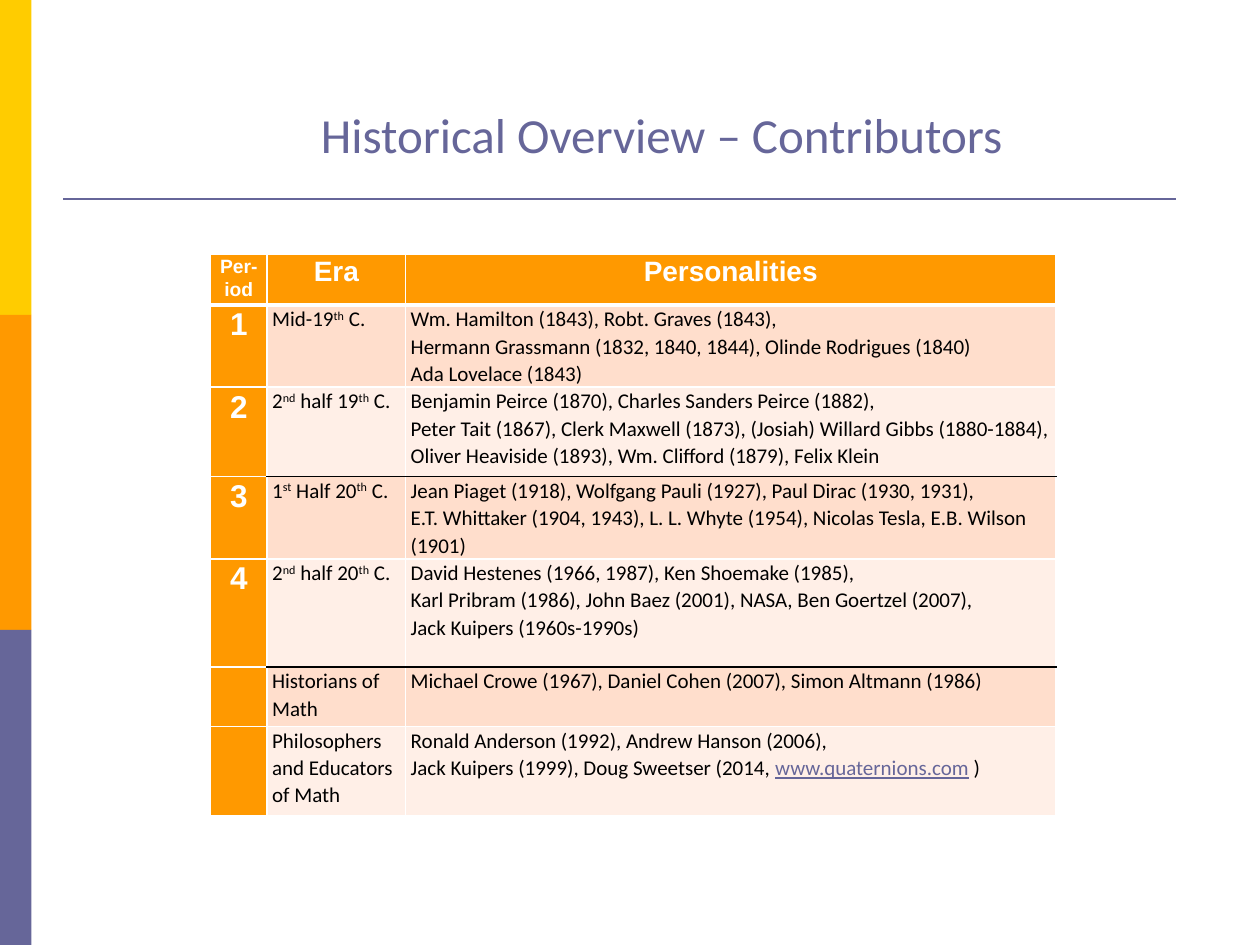
from lxml import etree
from pptx import Presentation
from pptx import util as u
from pptx.dml.color import RGBColor
from pptx.enum import shapes, text
from pptx.oxml import ns

YELLOW = RGBColor(0xFF, 0xCC, 0x00)
ORANGE = RGBColor(0xFF, 0x99, 0x00)
PURPLE = RGBColor(0x66, 0x66, 0x99)
PEACH = RGBColor(0xFF, 0xDE, 0xCC)
PALE = RGBColor(0xFF, 0xEF, 0xE7)
WHITE = RGBColor(0xFF, 0xFF, 0xFF)
BLACK = RGBColor(0x00, 0x00, 0x00)

# In the texts, ^ encloses a superscript and _ a web address.
HEADER = ("Per-iod", "Era", "Personalities")
CONTRIBUTORS = [
    ("1", "Mid-19^th^ C.",
     "Wm. Hamilton (1843), Robt. Graves (1843),\n"
     "Hermann Grassmann (1832, 1840, 1844), Olinde Rodrigues (1840)\n"
     "Ada Lovelace (1843)"),
    ("2", "2^nd^ half 19^th^ C.",
     "Benjamin Peirce (1870), Charles Sanders Peirce (1882),\n"
     "Peter Tait (1867), Clerk Maxwell (1873), (Josiah) Willard Gibbs (1880-1884), "
     "Oliver Heaviside (1893), Wm. Clifford (1879), Felix Klein"),
    ("3", "1^st^ Half 20^th^ C.",
     "Jean Piaget (1918), Wolfgang Pauli (1927), Paul Dirac (1930, 1931),\n"
     "E.T. Whittaker (1904, 1943), L. L. Whyte (1954), Nicolas Tesla, "
     "E.B. Wilson (1901)"),
    ("4", "2^nd^ half 20^th^ C.",
     "David Hestenes (1966, 1987), Ken Shoemake (1985),\n"
     "Karl Pribram (1986), John Baez (2001), NASA, Ben Goertzel (2007),\n"
     "Jack Kuipers (1960s-1990s)"),
    ("", "Historians of Math",
     "Michael Crowe (1967), Daniel Cohen (2007), Simon Altmann (1986)"),
    ("", "Philosophers and Educators of Math",
     "Ronald Anderson (1992), Andrew Hanson (2006),\n"
     "Jack Kuipers (1999), Doug Sweetser (2014, _www.quaternions.com_ )"),
]
COLUMN_WIDTHS = (1.8, 4.4, 20.64)
ROW_HEIGHTS = (1.6, 2.56, 2.84, 2.56, 3.44, 1.88, 2.84)
RULED_ROWS = (2, 4)  # rows closed by a black line


class SlideBuilder:
    """Places elements on a grid of 40 columns by 30 rows."""

    heading_font = "Arial"
    body_font = "Calibri"

    def __init__(self, presentation):
        self.column = presentation.slide_width / 40
        self.row = presentation.slide_height / 30
        self.slide = presentation.slides.add_slide(presentation.slide_layouts[5])

    def x(self, columns):
        return u.Emu(round(columns * self.column))

    def y(self, rows):
        return u.Emu(round(rows * self.row))

    def box(self, left, top, width, height):
        return self.x(left), self.y(top), self.x(width), self.y(height)

    def format_run(self, run, font, size, color, bold=False):
        run.font.name = font
        run.font.size = u.Pt(size)
        run.font.color.rgb = color
        run.font.bold = bold

    def title(self, words, *place):
        shape = self.slide.shapes.title
        shape.left, shape.top, shape.width, shape.height = self.box(*place)
        frame = shape.text_frame
        frame.auto_size = text.MSO_AUTO_SIZE.NONE
        frame.vertical_anchor = text.MSO_ANCHOR.TOP
        paragraph = frame.paragraphs[0]
        paragraph.alignment = text.PP_ALIGN.CENTER
        paragraph.line_spacing = 0.9
        run = paragraph.add_run()
        run.text = words
        self.format_run(run, self.body_font, 28, PURPLE)

    def bar(self, color, *place):
        shape = self.slide.shapes.add_shape(
            shapes.MSO_SHAPE.RECTANGLE, *self.box(*place))
        shape.shadow.inherit = False
        shape.fill.solid()
        shape.fill.fore_color.rgb = color
        shape.line.fill.background()

    def rule(self, left, right, top):
        line = self.slide.shapes.add_connector(
            shapes.MSO_CONNECTOR.STRAIGHT,
            self.x(left), self.y(top), self.x(right), self.y(top))
        line.line.color.rgb = PURPLE
        line.line.width = u.Pt(1.5)
        etree.SubElement(line.element.spPr, ns.qn("a:effectLst"))

    def table(self, left, top, widths, heights):
        frame = self.slide.shapes.add_table(
            len(heights), len(widths),
            *self.box(left, top, sum(widths), sum(heights)))
        table = frame.table
        table.first_row = table.horz_banding = False
        for column, width in zip(table.columns, widths):
            column.width = self.x(width)
        for row, height in zip(table.rows, heights):
            row.height = self.y(height)
        return table

    def cell(self, cell, fill, top=(WHITE, 1), bottom=(WHITE, 1)):
        cell.margin_left = cell.margin_right = u.Inches(0.04)
        cell.margin_top = cell.margin_bottom = 0
        properties = cell._tc.get_or_add_tcPr()
        sides = {"L": (WHITE, 1), "R": (WHITE, 1), "T": top, "B": bottom}
        for side, (color, points) in sides.items():
            border = etree.SubElement(
                properties, ns.qn("a:ln" + side), w=str(u.Pt(points)))
            solid = etree.SubElement(border, ns.qn("a:solidFill"))
            etree.SubElement(solid, ns.qn("a:srgbClr"), val=str(color))
        cell.fill.solid()
        cell.fill.fore_color.rgb = fill

    def heading_text(self, cell, words, size):
        paragraph = cell.text_frame.paragraphs[0]
        paragraph.alignment = text.PP_ALIGN.CENTER
        paragraph.line_spacing = 1.07
        run = paragraph.add_run()
        run.text = words
        self.format_run(run, self.heading_font, size, WHITE, bold=True)

    def body_text(self, cell, words):
        frame = cell.text_frame
        for number, line in enumerate(words.split("\n")):
            paragraph = frame.add_paragraph() if number else frame.paragraphs[0]
            paragraph.line_spacing = 1.07
            for raised, part in enumerate(line.split("^")):
                for address, piece in enumerate(part.split("_")):
                    run = paragraph.add_run()
                    run.text = piece
                    linked = address % 2 == 1
                    self.format_run(run, self.body_font, 12,
                                    PURPLE if linked else BLACK)
                    if linked:
                        run.font.underline = True
                    if raised % 2:
                        run.font._element.set("baseline", "30000")


def main():
    presentation = Presentation()
    presentation.slide_width = u.Inches(10)
    presentation.slide_height = u.Inches(7.5)
    builder = SlideBuilder(presentation)

    # Side bars, title and rule
    for index, color in enumerate((YELLOW, ORANGE, PURPLE)):
        builder.bar(color, 0, index * 10, 1, 10)
    builder.rule(2, 37.32, 6.32)
    builder.title("Historical Overview – Contributors", 5, 3.32, 32, 1.52)

    # Table header
    table = builder.table(6.68, 8.08, COLUMN_WIDTHS, ROW_HEIGHTS)
    for column, (words, size) in enumerate(zip(HEADER, (11, 16, 16))):
        cell = table.cell(0, column)
        builder.cell(cell, ORANGE, bottom=(WHITE, 3))
        builder.heading_text(cell, words, size)

    # Table body
    for row, (period, *details) in enumerate(CONTRIBUTORS, start=1):
        cell = table.cell(row, 0)
        builder.cell(cell, ORANGE, top=(WHITE, 3 if row == 1 else 1))
        if period:
            builder.heading_text(cell, period, 18)
        top = (BLACK, 1) if row - 1 in RULED_ROWS else (WHITE, 3 if row == 1 else 1)
        bottom = (BLACK if row in RULED_ROWS else WHITE, 1)
        for column, words in enumerate(details, start=1):
            cell = table.cell(row, column)
            builder.cell(cell, PEACH if row % 2 else PALE, top, bottom)
            builder.body_text(cell, words)

    presentation.save("out.pptx")


if __name__ == "__main__":
    main()
